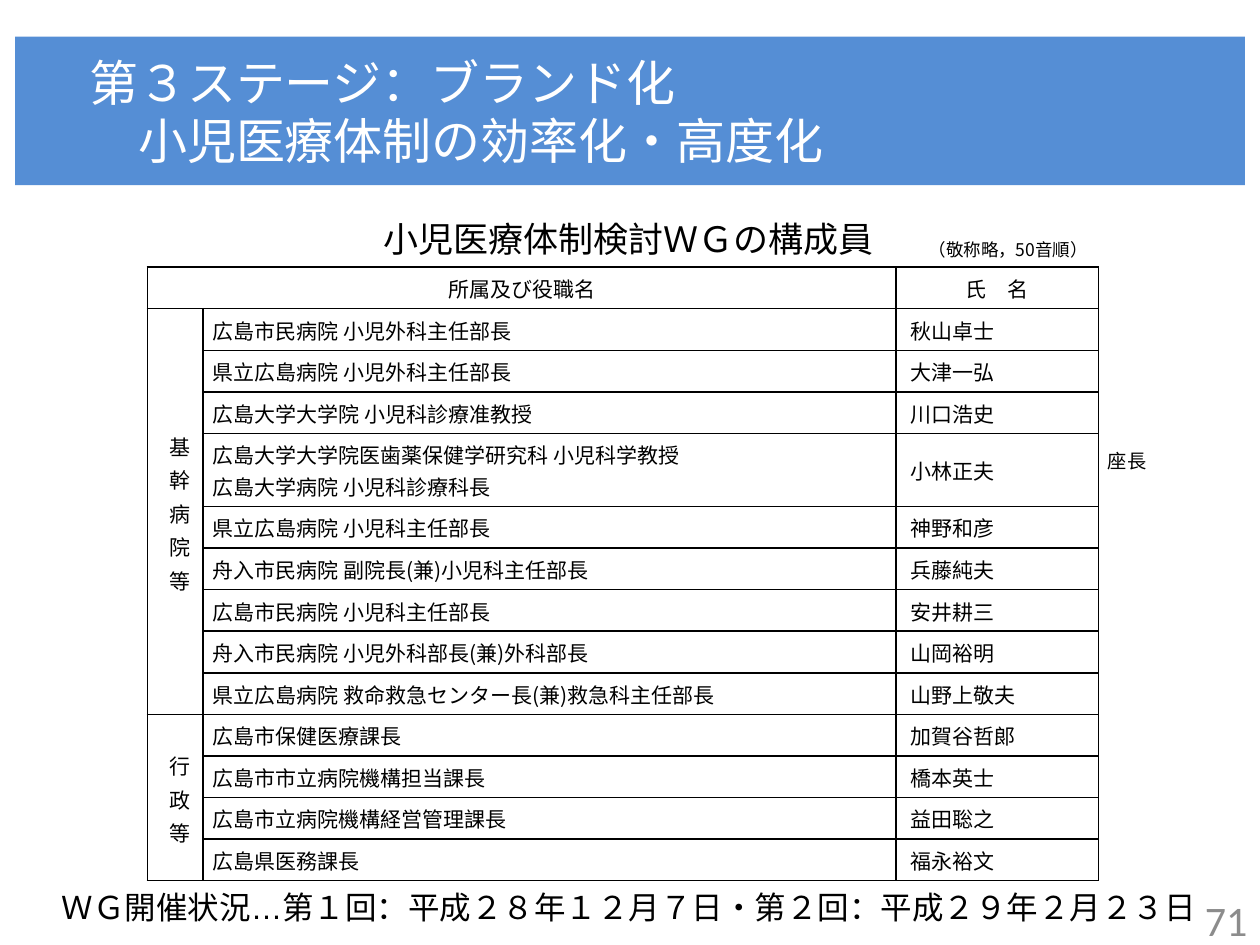
"""Build the slide listing the members of the paediatric care working group."""
from dataclasses import dataclass
from typing import Any

import pptx
import pptx.dml.color
import pptx.enum.text
import pptx.oxml.ns
import pptx.util
from lxml import etree

ALIGN = pptx.enum.text.PP_ALIGN
ANCHOR = pptx.enum.text.MSO_ANCHOR
SLIDE_WIDTH, SLIDE_HEIGHT = pptx.util.Inches(10), pptx.util.Inches(7.5)
GOTHIC = "Noto Sans CJK JP"
BLACK, WHITE, BLUE, GREY = "000000", "FFFFFF", "558ED5", "8C8C8C"
COLUMN_WIDTHS = (0.44, 5.5, 1.61)
LINE_HEIGHT, CELL_PADDING = 0.25, 0.08


@dataclass(frozen=True)
class Region:
    """A rectangle in percent of the slide's width and height."""
    left: float
    top: float
    width: float
    height: float

    def lengths(self) -> tuple[int, int, int, int]:
        """Return left, top, width and height in slide units."""
        return (int(SLIDE_WIDTH * self.left / 100), int(SLIDE_HEIGHT * self.top / 100),
                int(SLIDE_WIDTH * self.width / 100), int(SLIDE_HEIGHT * self.height / 100))


@dataclass(frozen=True)
class Style:
    """The look of a paragraph."""
    size: float
    font: str = "Arial"
    color: str = BLACK
    align: Any = ALIGN.CENTER
    spacing: float | None = None
    indent: float = 0


@dataclass(frozen=True)
class Label:
    """A text box on the slide."""
    text: str
    region: Region
    style: Style
    anchor: Any = ANCHOR.MIDDLE


@dataclass(frozen=True)
class Group:
    """A block of members, each a post and a name."""
    name: str
    members: tuple[tuple[str, str], ...]


HEADING = Style(12, GOTHIC, spacing=18)
GROUP_NAME = Style(12, GOTHIC, spacing=19.2, indent=0.08)
POST = Style(12, GOTHIC, align=ALIGN.LEFT, spacing=18)
PERSON = Style(12, GOTHIC, align=ALIGN.JUSTIFY, spacing=18, indent=0.04)

TITLE = Label("　第３ステージ：ブランド化\n　　小児医療体制の効率化・高度化",
              Region(1.2, 3.87, 97.6, 15.73), Style(28, color=WHITE, align=ALIGN.LEFT))
LABELS = (
    Label("71", Region(76.7, 94.67, 23.3, 5.33), Style(24, "Calibri", GREY, ALIGN.RIGHT)),
    Label("小児医療体制検討ＷＧの構成員", Region(1.1, 19.73, 97.6, 11.07), Style(20)),
    Label("（敬称略，50音順）", Region(69, 24.67, 18.3, 3.6),
          Style(10, GOTHIC, align=ALIGN.RIGHT), ANCHOR.TOP),
    Label("座長", Region(86.2, 46.93, 6.5, 3.87), Style(11, GOTHIC), ANCHOR.TOP),
    Label("ＷＧ開催状況…第１回：平成２８年１２月７日・第２回：平成２９年２月２３日",
          Region(0, 92, 99.8, 8), Style(18)),
)
GROUPS = (
    Group("基幹病院等", (
        ("広島市民病院 小児外科主任部長", "秋山卓士"),
        ("県立広島病院 小児外科主任部長", "大津一弘"),
        ("広島大学大学院 小児科診療准教授", "川口浩史"),
        ("広島大学大学院医歯薬保健学研究科 小児科学教授\n広島大学病院 小児科診療科長", "小林正夫"),
        ("県立広島病院 小児科主任部長", "神野和彦"),
        ("舟入市民病院 副院長(兼)小児科主任部長", "兵藤純夫"),
        ("広島市民病院 小児科主任部長", "安井耕三"),
        ("舟入市民病院 小児外科部長(兼)外科部長", "山岡裕明"),
        ("県立広島病院 救命救急センター長(兼)救急科主任部長", "山野上敬夫"),
    )),
    Group("行政等", (
        ("広島市保健医療課長", "加賀谷哲郎"),
        ("広島市市立病院機構担当課長", "橋本英士"),
        ("広島市立病院機構経営管理課長", "益田聡之"),
        ("広島県医務課長", "福永裕文"),
    )),
)


def rgb(color: str) -> pptx.dml.color.RGBColor:
    """Turn a hex string into a colour."""
    return pptx.dml.color.RGBColor.from_string(color)


def write(frame: Any, text: str, style: Style) -> None:
    """Put text into a frame and format every paragraph."""
    frame.text = text
    for para in frame.paragraphs:
        para.alignment = style.align
        if style.spacing:
            para.line_spacing = pptx.util.Pt(style.spacing)
        if style.indent:
            para._p.get_or_add_pPr().set("marL", str(pptx.util.Inches(style.indent)))
        for span in para.runs:
            span.font.size = pptx.util.Pt(style.size)
            span.font.name = style.font
            span.font.color.rgb = rgb(style.color)
            latin = span._r.rPr.find(pptx.oxml.ns.qn("a:latin"))
            east_asian = etree.Element(pptx.oxml.ns.qn("a:ea"), typeface=style.font)
            latin.addnext(east_asian)


def fill_box(box: Any, label: Label) -> None:
    """Place a box and write its label."""
    box.left, box.top, box.width, box.height = label.region.lengths()
    frame = box.text_frame
    frame.word_wrap = True
    frame.auto_size = pptx.enum.text.MSO_AUTO_SIZE.NONE
    frame.vertical_anchor = label.anchor
    write(frame, label.text, label.style)


def add_title(page: Any) -> None:
    """Turn the title placeholder into the blue banner."""
    banner = page.shapes.title
    fill_box(banner, TITLE)
    banner.text_frame.margin_left = pptx.util.Inches(0.2)
    banner.fill.solid()
    banner.fill.fore_color.rgb = rgb(BLUE)


def format_cell(cell: Any) -> None:
    """Give a cell its margins, empty fill and thin black borders."""
    cell.vertical_anchor = ANCHOR.MIDDLE
    cell.margin_left = cell.margin_right = pptx.util.Inches(CELL_PADDING)
    cell.margin_top = cell.margin_bottom = pptx.util.Inches(CELL_PADDING / 2)
    cell.fill.background()
    properties = cell._tc.get_or_add_tcPr()
    for position, side in enumerate(("lnL", "lnR", "lnT", "lnB")):
        line = etree.Element(pptx.oxml.ns.qn(f"a:{side}"), w=str(pptx.util.Pt(1)))
        solid = etree.SubElement(line, pptx.oxml.ns.qn("a:solidFill"))
        etree.SubElement(solid, pptx.oxml.ns.qn("a:srgbClr"), val=BLACK)
        properties.insert(position, line)


def add_members(page: Any) -> None:
    """Draw the table of members, grouped by kind of institution."""
    members = [member for group in GROUPS for member in group.members]
    line_counts = [1] + [post.count("\n") + 1 for post, _ in members]
    heights = [count * LINE_HEIGHT + CELL_PADDING for count in line_counts]
    region = Region(11.7, 28.27, sum(COLUMN_WIDTHS) * 10, sum(heights) / 7.5 * 100)
    table = page.shapes.add_table(len(heights), len(COLUMN_WIDTHS), *region.lengths()).table
    table.first_row = table.horz_banding = False
    for column, width in zip(table.columns, COLUMN_WIDTHS):
        column.width = pptx.util.Inches(width)
    for row, height in zip(table.rows, heights):
        row.height = pptx.util.Inches(height)
    for cell in table.iter_cells():
        format_cell(cell)
    table.cell(0, 0).merge(table.cell(0, 1))
    write(table.cell(0, 0).text_frame, "所属及び役職名", HEADING)
    write(table.cell(0, 2).text_frame, "氏　名", HEADING)
    for index, (post, person) in enumerate(members, start=1):
        write(table.cell(index, 1).text_frame, post, POST)
        write(table.cell(index, 2).text_frame, person, PERSON)
    first = 1
    for group in GROUPS:
        cell = table.cell(first, 0)
        cell.merge(table.cell(first + len(group.members) - 1, 0))
        cell._tc.tcPr.set("vert", "eaVert")
        write(cell.text_frame, group.name, GROUP_NAME)
        first += len(group.members)


def main() -> None:
    """Build and save the deck."""
    deck = pptx.Presentation()
    deck.slide_width, deck.slide_height = SLIDE_WIDTH, SLIDE_HEIGHT
    page = deck.slides.add_slide(deck.slide_layouts[5])
    add_title(page)
    add_members(page)
    for label in LABELS:
        fill_box(page.shapes.add_textbox(0, 0, 0, 0), label)
    deck.save("out.pptx")


if __name__ == "__main__":
    main()
